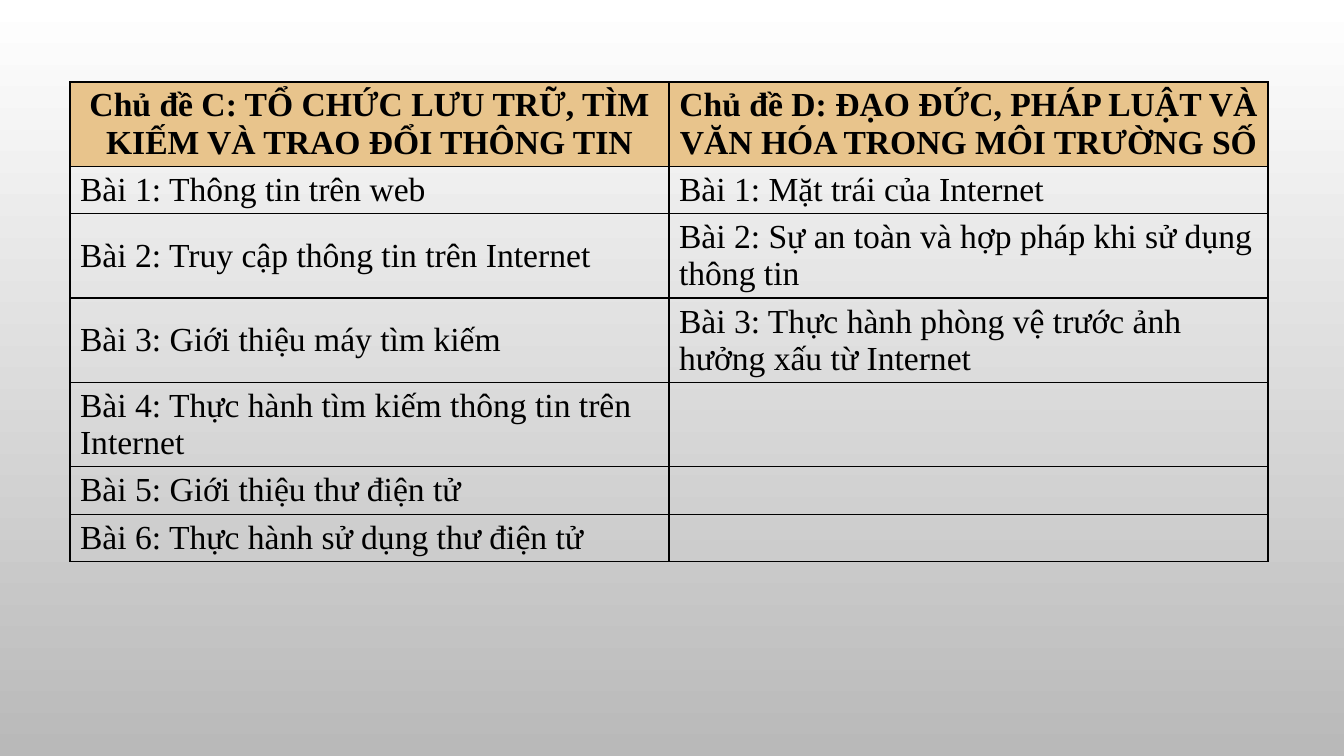
from lxml import etree
from pptx import Presentation
from pptx.dml.color import RGBColor
from pptx.enum.text import MSO_ANCHOR, PP_ALIGN
from pptx.oxml.ns import qn
from pptx.util import Emu, Pt

CENTER, LEFT = PP_ALIGN.CENTER, PP_ALIGN.LEFT
TOP, MIDDLE = MSO_ANCHOR.TOP, MSO_ANCHOR.MIDDLE

TOPICS = [
    (
        "Chủ đề C: TỔ CHỨC LƯU TRỮ, TÌM KIẾM VÀ TRAO ĐỔI THÔNG TIN",
        "Chủ đề D: ĐẠO ĐỨC, PHÁP LUẬT VÀ VĂN HÓA TRONG MÔI TRƯỜNG SỐ",
    ),
    ("Bài 1: Thông tin trên web", "Bài 1: Mặt trái của Internet"),
    (
        "Bài 2: Truy cập thông tin trên Internet",
        "Bài 2: Sự an toàn và hợp pháp khi sử dụng thông tin",
    ),
    (
        "Bài 3: Giới thiệu máy tìm kiếm",
        "Bài 3: Thực hành phòng vệ trước ảnh hưởng xấu từ Internet",
    ),
    ("Bài 4: Thực hành tìm kiếm thông tin trên Internet", ""),
    ("Bài 5: Giới thiệu thư điện tử", ""),
    ("Bài 6: Thực hành sử dụng thư điện tử", ""),
]
LINES_PER_ROW = [2, 1, 2, 2, 2, 1, 1]
ROW_HEIGHTS = {1: 47, 2: 84}
SLIDE_WIDTH, SLIDE_HEIGHT = 1344, 756
TABLE_LEFT, TABLE_TOP, COLUMN_WIDTH = 70, 82, 599
FONT_NAME, FONT_SIZE = "Times New Roman", 24
BLACK, HEADER_FILL = "000000", "E8C48C"
BACKGROUND_COLORS = ("FFFFFF", "B9B9B9")


def px(length):
    return Emu(round(length * 914400 / 100.8))


def color(hex_string):
    return RGBColor.from_string(hex_string)


def add_borders(cell):
    properties = cell._tc.get_or_add_tcPr()
    for side in ("lnL", "lnR", "lnT", "lnB"):
        line = etree.SubElement(properties, qn(f"a:{side}"), w=str(Pt(1)))
        fill = etree.SubElement(line, qn("a:solidFill"))
        etree.SubElement(fill, qn("a:srgbClr"), val=BLACK)


def fill_cell(cell, text, is_header, is_first_column):
    add_borders(cell)
    if is_header:
        cell.fill.solid()
        cell.fill.fore_color.rgb = color(HEADER_FILL)
    else:
        cell.fill.background()
    cell.vertical_anchor = MIDDLE if is_first_column and not is_header else TOP
    cell.text_frame.text = text
    paragraph = cell.text_frame.paragraphs[0]
    paragraph.alignment = CENTER if is_header else LEFT
    for run in paragraph.runs:
        run.font.name = FONT_NAME
        run.font.size = Pt(FONT_SIZE)
        run.font.bold = is_header
        run.font.color.rgb = color(BLACK)


def paint_background(slide):
    fill = slide.background.fill
    fill.gradient()
    fill.gradient_angle = 270
    for position, (stop, hex_string) in enumerate(zip(fill.gradient_stops, BACKGROUND_COLORS)):
        stop.position = position
        stop.color.rgb = color(hex_string)


def add_topic_table(slide):
    heights = [ROW_HEIGHTS[lines] for lines in LINES_PER_ROW]
    column_count = len(TOPICS[0])
    table = slide.shapes.add_table(
        len(TOPICS), column_count, px(TABLE_LEFT), px(TABLE_TOP),
        px(COLUMN_WIDTH * column_count), px(sum(heights)),
    ).table
    table.horz_banding = False
    table.first_row = False
    for column in table.columns:
        column.width = px(COLUMN_WIDTH)
    for row_index, (texts, height) in enumerate(zip(TOPICS, heights)):
        table.rows[row_index].height = px(height)
        for column_index, text in enumerate(texts):
            cell = table.cell(row_index, column_index)
            fill_cell(cell, text, row_index == 0, column_index == 0)


def main():
    presentation = Presentation()
    presentation.slide_width = px(SLIDE_WIDTH)
    presentation.slide_height = px(SLIDE_HEIGHT)
    slide = presentation.slides.add_slide(presentation.slide_layouts[6])
    paint_background(slide)
    add_topic_table(slide)
    presentation.save("out.pptx")


if __name__ == "__main__":
    main()
